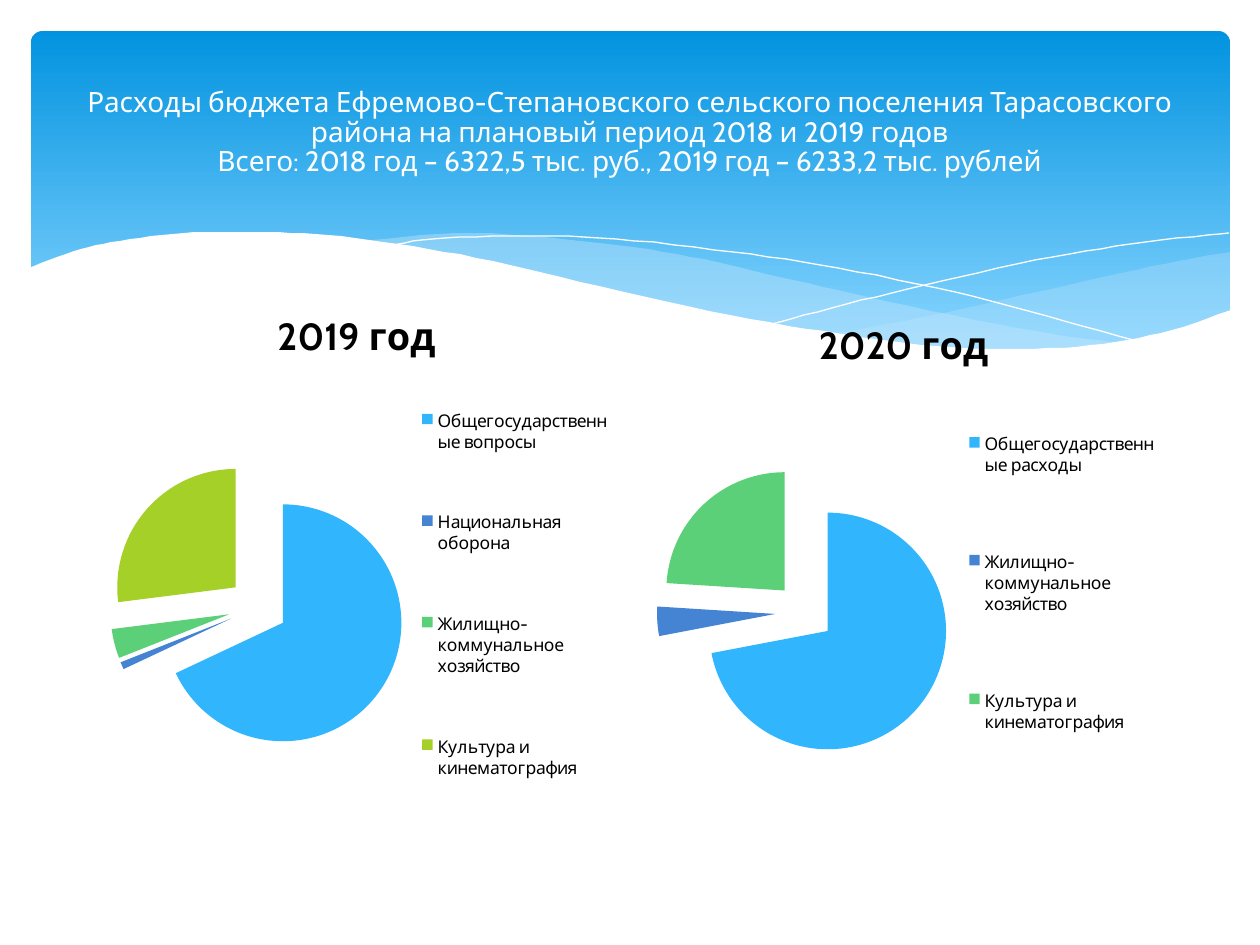
from dataclasses import dataclass
from lxml.etree import SubElement
from pptx import Presentation
from pptx.chart.data import CategoryChartData
from pptx.dml.color import RGBColor as RGB
from pptx.enum.chart import XL_CHART_TYPE as CT, XL_LEGEND_POSITION as LEGEND
from pptx.enum.shapes import MSO_SHAPE as SHAPE
from pptx.enum.text import MSO_ANCHOR as ANCHOR, MSO_AUTO_SIZE as AUTOSIZE, PP_ALIGN as ALIGN
from pptx.oxml import parse_xml
from pptx.oxml.ns import nsdecls, qn
from pptx.util import Pt

PX = 914400 / 126


@dataclass
class Theme:
    font: str = "Cabin"
    white: RGB = RGB(0xFF, 0xFF, 0xFF)
    black: RGB = RGB(0, 0, 0)
    sky_top: RGB = RGB(0x02, 0x93, 0xE0)
    sky_bottom: RGB = RGB(0x83, 0xD3, 0xFE)
    mist: RGB = RGB(0xC6, 0xE7, 0xFC)
    blue: RGB = RGB(0x31, 0xB6, 0xFD)
    navy: RGB = RGB(0x45, 0x84, 0xD3)
    green: RGB = RGB(0x5B, 0xD0, 0x78)
    lime: RGB = RGB(0xA5, 0xD0, 0x28)
    title: float = 16
    chart: float = 18
    chart_title: float = 21.6
    legend: float = 10


theme = Theme()


def smooth(points, steps=6):
    """Catmull-Rom curve through the points, as a fine polyline."""
    ext = [points[0], *points, points[-1]]
    curve = [points[0]]
    for a, b, c, d in zip(ext, ext[1:], ext[2:], ext[3:]):
        for i in range(1, steps + 1):
            t = i / steps
            curve.append(tuple(
                (2 * q + (r - p) * t + (2 * p - 5 * q + 4 * r - s) * t ** 2
                 + (3 * q - p - 3 * r + s) * t ** 3) / 2
                for p, q, r, s in zip(a, b, c, d)))
    return curve


def px(*lengths):
    return [round(n * PX) for n in lengths]


prs = Presentation()
prs.slide_width, prs.slide_height = px(1260, 945)
slide = prs.slides.add_slide(prs.slide_layouts[5])
shapes = slide.shapes

# Sky panel
sky = shapes.add_shape(SHAPE.ROUNDED_RECTANGLE, *px(31, 31, 1199, 340))
sky.adjustments[0] = 0.034
sky.shadow.inherit = False
sky.line.fill.background()
sky.fill.gradient()
sky.fill.gradient_angle = 270
for stop, color, position in zip(sky.fill.gradient_stops,
                                 (theme.sky_top, theme.sky_bottom), (0, 0.9)):
    stop.color.rgb, stop.position = color, position

# Waves: outline, fill opacity in percent (None for a line only)
right_wave = smooth([(1230, 252), (1178, 261), (1085, 281), (949, 312), (833, 334)]) + smooth(
    [(833, 334), (888, 341), (954, 348), (1012, 350), (1076, 348), (1140, 339),
     (1187, 326), (1230, 311)])
middle_wave = smooth(
    [(1125, 344), (1017, 328), (890, 302), (793, 280), (717, 262), (633, 247),
     (529, 236), (455, 233), (360, 241)]) + smooth(
    [(360, 241), (431, 251), (509, 266), (619, 292), (736, 318), (838, 335),
     (927, 347), (1017, 350), (1080, 349), (1125, 344)])
falling_line = smooth([(389, 246), (433, 239), (524, 236), (616, 239), (733, 252),
                       (838, 268), (955, 292), (1047, 316), (1143, 343)])
rising_line = smooth([(772, 324), (847, 304), (942, 281), (1053, 257), (1146, 242),
                      (1229, 233)])
white_wave = smooth(
    [(1231, 310), (1172, 330), (1103, 344), (1019, 349), (936, 346), (842, 334),
     (730, 315), (599, 286), (493, 261), (398, 244), (315, 234), (243, 232),
     (184, 233), (120, 241), (74, 251), (29, 268)]) + [(29, 415), (1231, 415)]

for outline, color, opacity in ((right_wave, theme.mist, 29), (middle_wave, theme.mist, 40),
                                (falling_line, theme.white, None),
                                (rising_line, theme.white, None),
                                (white_wave, theme.white, 100)):
    builder = shapes.build_freeform(*outline[0], scale=PX)
    builder.add_line_segments(outline[1:], close=opacity is not None)
    sp = builder.convert_to_shape()
    sp.shadow.inherit = False
    if opacity is None:
        sp.fill.background()
        sp.line.color.rgb = color
        sp.line.width = 0
        continue
    sp.line.fill.background()
    sp.fill.solid()
    sp.fill.fore_color.rgb = color
    if opacity < 100:
        clr = next(sp.element.iter(qn("a:srgbClr")))
        SubElement(clr, qn("a:alpha"), val=str(opacity * 1000))

# Title, brought in front of the waves
title = shapes.title
title.left, title.top, title.width, title.height = px(63, 47, 1134, 173)
shapes.element.append(title.element)
tf = title.text_frame
tf.word_wrap = True
tf.auto_size = AUTOSIZE.NONE
tf.vertical_anchor = ANCHOR.MIDDLE
p = tf.paragraphs[0]
p.alignment = ALIGN.CENTER
p.line_spacing = 0.88
title_lines = (
    "Расходы бюджета Ефремово-Степановского сельского поселения Тарасовского "
    "района на плановый период 2018 и 2019 годов",
    "Всего: 2018 год – 6322,5 тыс. руб., 2019 год – 6233,2 тыс. рублей")
for i, line in enumerate(title_lines):
    if i:
        p.add_line_break()
    r = p.add_run()
    r.text = line
    r.font.name, r.font.size = theme.font, Pt(theme.title)
    r.font.color.rgb = theme.white

# Pie charts: frame, then plot and legend boxes within it, all in px
housing, culture = "Жилищно-коммунальное хозяйство", "Культура и кинематография"
pies = (
    ("2019 год", (93, 284, 527, 561), (17, 175, 296, 296), (337, 67, 185, 487),
     (("Общегосударственные вопросы", 68, theme.blue),
      ("Национальная оборона", 1, theme.navy),
      (housing, 4, theme.green), (culture, 27, theme.lime))),
    ("2020 год", (640, 294, 527, 551), (17, 170, 296, 296), (337, 64, 185, 450),
     (("Общегосударственные расходы", 72, theme.blue),
      (housing, 4, theme.navy), (culture, 24, theme.green))),
)
for name, frame, plot_box, legend_box, slices in pies:
    data = CategoryChartData()
    data.categories = [label for label, _, _ in slices]
    data.add_series(name, [value for _, value, _ in slices])
    chart = shapes.add_chart(CT.PIE, *px(*frame), data).chart
    chart.font.name, chart.font.size = theme.font, Pt(theme.chart)
    chart.font.color.rgb = theme.black

    chart.has_title = True
    r = chart.chart_title.text_frame.paragraphs[0].add_run()
    r.text = name
    r.font.name, r.font.size, r.font.bold = theme.font, Pt(theme.chart_title), True
    r.font.color.rgb = theme.black

    chart.has_legend = True
    legend = chart.legend
    legend.position = LEGEND.RIGHT
    legend.include_in_layout = False
    legend.font.name, legend.font.size = theme.font, Pt(theme.legend)
    legend.font.color.rgb = theme.black

    plot = chart.plots[0]
    plot.vary_by_categories = True
    series = plot.series[0]
    for i, (_, _, color) in enumerate(slices):
        fill = series.points[i].format.fill
        fill.solid()
        fill.fore_color.rgb = color
    first_point = series._element.find(qn("c:dPt"))
    first_point.addprevious(parse_xml(f'<c:explosion {nsdecls("c")} val="25"/>'))

    # Fixed places for the pie and its legend
    area = chart._chartSpace.chart.plotArea
    for old in area.findall(qn("c:layout")) + legend._element.findall(qn("c:layout")):
        old.getparent().remove(old)
    for box, target in ((plot_box, "inner"), (legend_box, None)):
        layout = parse_xml(f'<c:layout {nsdecls("c")}><c:manualLayout/></c:layout>')
        tags = [("layoutTarget", target)] if target else []
        tags += [("xMode", "edge"), ("yMode", "edge")]
        tags += [(tag, f"{n / full:.3f}") for tag, n, full in zip("xywh", box, frame[2:] * 2)]
        for tag, value in tags:
            SubElement(layout[0], qn(f"c:{tag}"), val=value)
        if target:
            area.insert(0, layout)
        else:
            legend._element.find(qn("c:legendPos")).addnext(layout)

prs.save("out.pptx")
